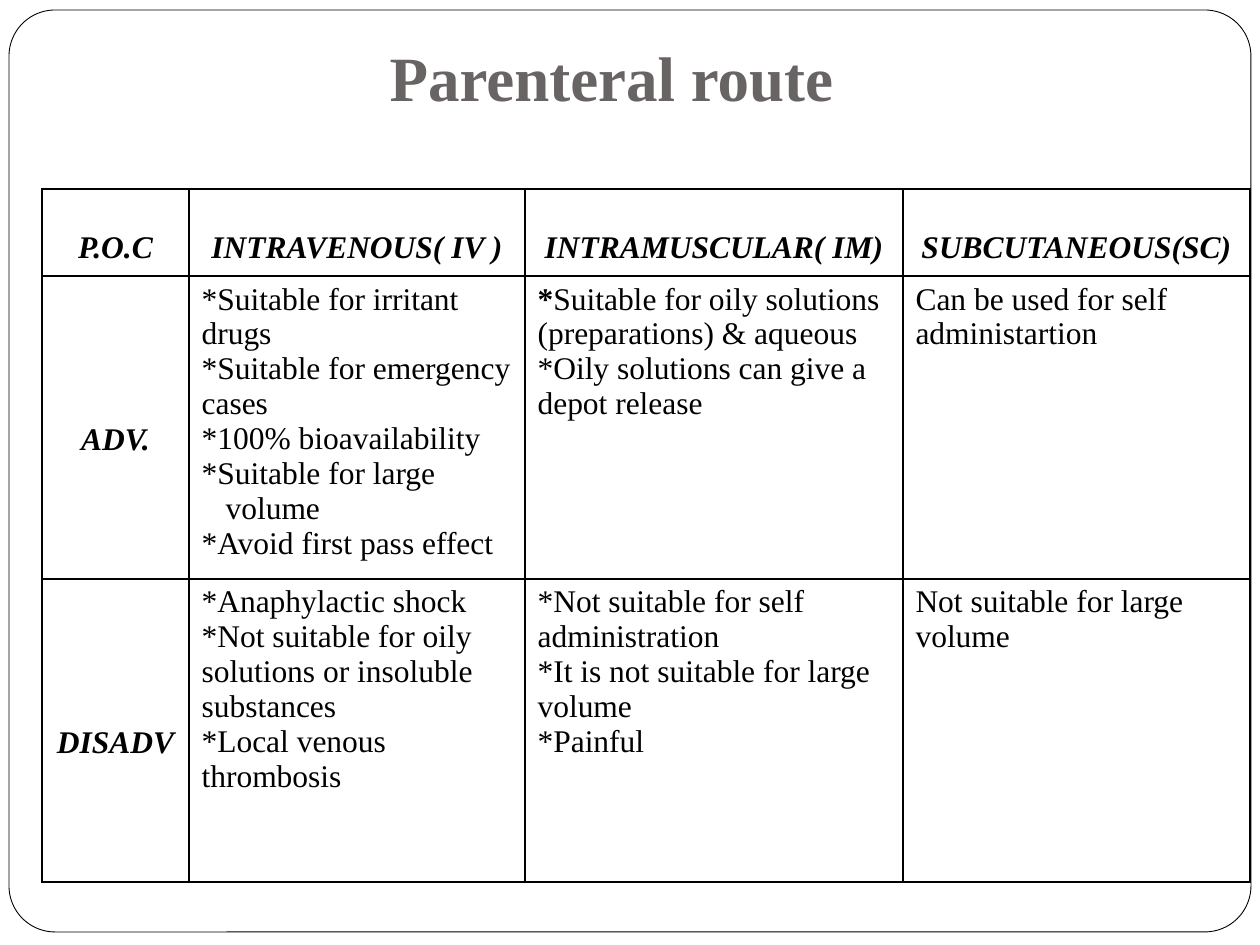
from dataclasses import dataclass

from lxml import etree
from pptx import Presentation
from pptx.dml.color import RGBColor
from pptx.enum.shapes import MSO_SHAPE
from pptx.enum.text import MSO_ANCHOR, PP_ALIGN
from pptx.oxml.ns import qn
from pptx.util import Pt

ROUND = MSO_SHAPE.ROUNDED_RECTANGLE
TOP = MSO_ANCHOR.TOP
LEFT, MID = PP_ALIGN.LEFT, PP_ALIGN.CENTER
SCALE = 914400 // 126


@dataclass(frozen=True)
class Theme:
    font: str = "Times New Roman"
    title: int = 36
    body: int = 18
    ink: RGBColor = RGBColor(0, 0, 0)
    paper: RGBColor = RGBColor(255, 255, 255)
    head: RGBColor = RGBColor(0x69, 0x64, 0x64)


@dataclass(frozen=True)
class Run:
    text: str
    bold: bool = False
    slant: bool = False


@dataclass(frozen=True)
class Para:
    runs: tuple[Run, ...]
    inset: int = 0


@dataclass(frozen=True)
class Cell:
    paras: tuple[Para, ...]
    align: PP_ALIGN = LEFT
    top: int = 6


THEME = Theme()
COLS = (147, 336, 378, 347)
ROWS = (87, 303, 303)
HEAD_TOP, SIDE_TOP = 41, 146


def px(n: int) -> int:
    return n * SCALE


def label(text: str, top: int) -> Cell:
    return Cell((Para((Run(text, True, True),)),), MID, top)


def notes(*lines: str | Para) -> Cell:
    """Turn plain lines into left-aligned paragraphs."""
    return Cell(tuple(x if isinstance(x, Para) else Para((Run(x),))
                      for x in lines))


GRID = (
    tuple(label(text, HEAD_TOP) for text in (
        "P.O.C", "INTRAVENOUS( IV )", "INTRAMUSCULAR( IM)",
        "SUBCUTANEOUS(SC)")),
    (
        label("ADV.", SIDE_TOP),
        notes("*Suitable for irritant drugs",
              "*Suitable for emergency cases",
              "*100% bioavailability",
              "*Suitable for large",
              Para((Run("volume"),), 24),
              "*Avoid first pass effect"),
        notes(Para((Run("*", True), Run(
                  "Suitable for oily solutions (preparations) & aqueous"))),
              "*Oily solutions can give a depot release"),
        notes("Can be used for self administartion"),
    ),
    (
        label("DISADV", SIDE_TOP),
        notes("*Anaphylactic shock",
              "*Not suitable for oily solutions or insoluble substances",
              "*Local venous thrombosis"),
        notes("*Not suitable for self administration",
              "*It is not suitable for large volume",
              "*Painful"),
        notes("Not suitable for large volume"),
    ),
)


def write(para, run: Run, size: int, color: RGBColor) -> None:
    part = para.add_run()
    part.text = run.text
    font = part.font
    font.name, font.size = THEME.font, Pt(size)
    font.bold, font.italic = run.bold, run.slant
    font.color.rgb = color


def indent(para, left: int) -> None:
    props = para._p.get_or_add_pPr()
    props.set("marL", str(px(left)))
    props.set("indent", "0")


def border(cell) -> None:
    props = cell._tc.get_or_add_tcPr()
    for side in "LRTB":
        line = etree.SubElement(props, qn(f"a:ln{side}"), w=str(Pt(1)))
        fill = etree.SubElement(line, qn("a:solidFill"))
        etree.SubElement(fill, qn("a:srgbClr"), val=str(THEME.ink))


def fill_cell(cell, data: Cell) -> None:
    border(cell)
    cell.fill.background()
    cell.vertical_anchor = TOP
    cell.margin_top = px(data.top)
    frame = cell.text_frame
    for i, item in enumerate(data.paras):
        para = frame.add_paragraph() if i else frame.paragraphs[0]
        para.alignment = data.align
        if item.inset:
            indent(para, item.inset)
        for run in item.runs:
            write(para, run, THEME.body, THEME.ink)


def add_title(slide):
    title = slide.shapes.title
    title.left, title.top = px(126), px(38)
    title.width, title.height = px(1071), px(157)
    frame = title.text_frame
    frame.vertical_anchor = TOP
    frame.margin_top = px(1)
    para = frame.paragraphs[0]
    para.alignment = LEFT
    indent(para, 251)
    write(para, Run("Parenteral route", True), THEME.title, THEME.head)
    return title


def add_frame(slide, title) -> None:
    """Draw the rounded page border behind the title."""
    shape = slide.shapes.add_shape(ROUND, px(9), px(10), px(1242), px(922))
    shape.adjustments[0] = 0.05
    shape.shadow.inherit = False
    shape.fill.solid()
    shape.fill.fore_color.rgb = THEME.paper
    shape.line.color.rgb = THEME.ink
    shape.line.width = Pt(0.5)
    title.element.addprevious(shape.element)


def add_grid(slide) -> None:
    table = slide.shapes.add_table(
        len(ROWS), len(COLS), px(42), px(189),
        px(sum(COLS)), px(sum(ROWS))).table
    table.first_row = table.horz_banding = False
    for col, width in zip(table.columns, COLS):
        col.width = px(width)
    for row, height, items in zip(table.rows, ROWS, GRID):
        row.height = px(height)
        for cell, data in zip(row.cells, items):
            fill_cell(cell, data)


def main() -> None:
    deck = Presentation()
    deck.slide_width, deck.slide_height = px(1260), px(945)
    slide = deck.slides.add_slide(deck.slide_layouts[5])
    title = add_title(slide)
    add_frame(slide, title)
    add_grid(slide)
    deck.save("out.pptx")


if __name__ == "__main__":
    main()
